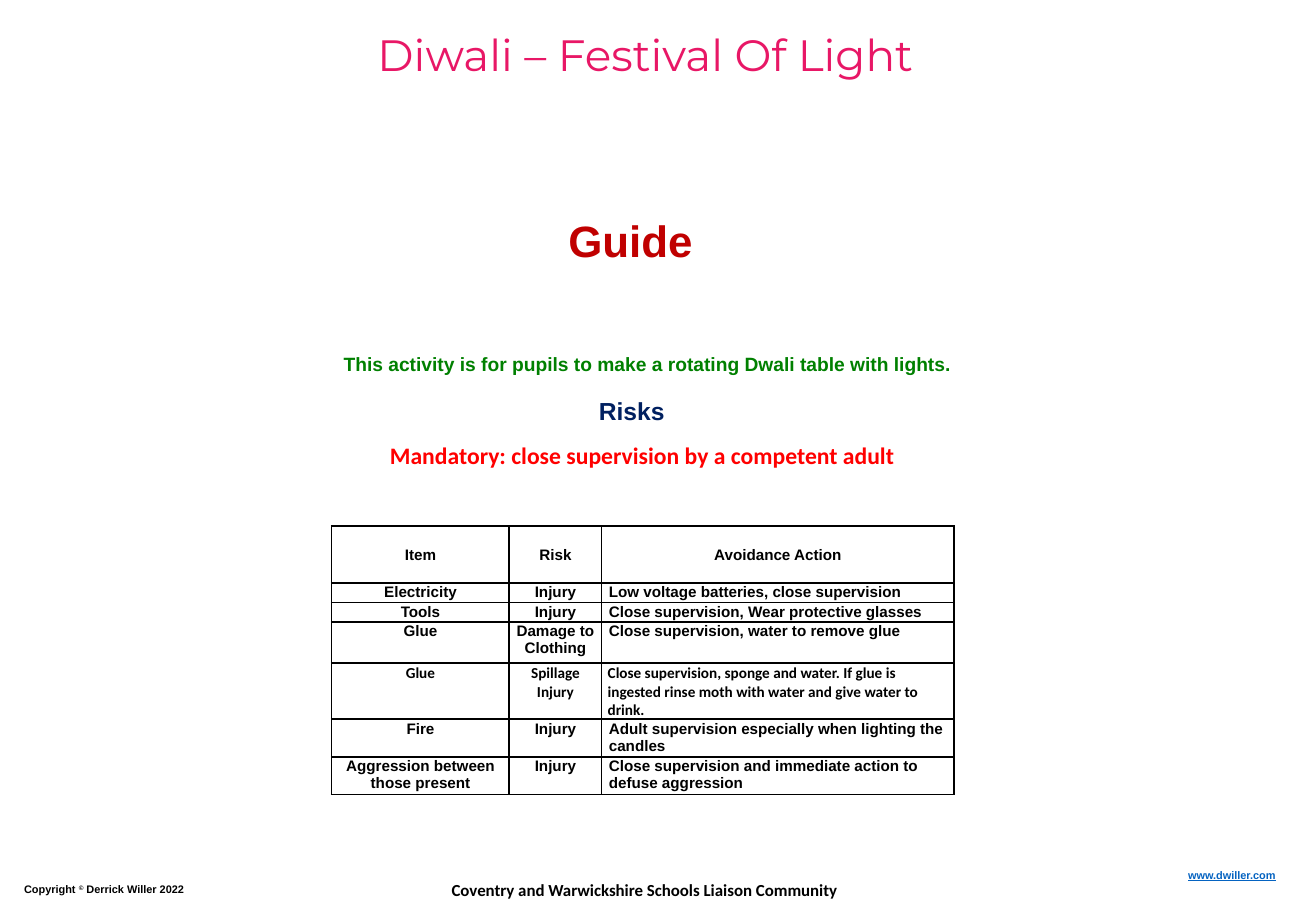
from dataclasses import dataclass
from lxml.etree import SubElement
from pptx import Presentation
from pptx.dml.color import RGBColor as Rgb
from pptx.enum.text import MSO_ANCHOR as Anchor, MSO_AUTO_SIZE as Fit, PP_ALIGN as Align
from pptx.oxml.ns import qn
from pptx.util import Pt


@dataclass(frozen=True)
class Theme:
    """Fonts, colours and type sizes of the guide."""
    display: str = "Montserrat"
    sans: str = "Arial"
    humanist: str = "Calibri"
    black: str = "000000"
    pink: str = "E81766"
    crimson: str = "C00000"
    green: str = "008000"
    navy: str = "002060"
    red: str = "FF0000"
    link: str = "0563C1"
    heading: float = 26
    risks: float = 14.6
    warning: float = 14
    body: float = 11.4
    community: float = 10
    table: float = 9
    small: float = 6.5


THEME = Theme()
PAGE_SIZE = (780, 540)
COLUMN_WIDTHS = (105.2, 54.8, 208.8)
ROW_HEIGHTS = (33.8, 11.4, 11.4, 24.4, 33.2, 22.2, 22.2)
CALIBRI_ROW = 4
RISK_ROWS = (
    ("Item", "Risk", "Avoidance Action"),
    ("Electricity", "Injury", "Low voltage batteries, close supervision"),
    ("Tools", "Injury", "Close supervision, Wear protective glasses"),
    ("Glue", "Damage to Clothing", "Close supervision, water to remove glue"),
    ("Glue", "Spillage\nInjury", "Close supervision, sponge and water. If glue is ingested "
     "rinse moth with water and give water to drink."),
    ("Fire", "Injury", "Adult supervision especially when lighting the candles"),
    ("Aggression between those present", "Injury",
     "Close supervision and immediate action to defuse aggression"),
)


def add_span(para, text, font=THEME.sans, size=THEME.table, color=THEME.black,
             bold=True, underline=None, raised=False):
    """Append formatted text to a paragraph."""
    span = para.add_run()
    span.text = text
    span.font.name = font
    span.font.size = Pt(size)
    span.font.bold = bold
    span.font.underline = underline
    span.font.color.rgb = Rgb.from_string(color)
    if raised:
        span._r.get_or_add_rPr().set("baseline", "30000")


def add_box(page, left, top, width, height, wrap=True, align=Align.LEFT):
    """Add a text box and return its first paragraph."""
    frame = page.shapes.add_textbox(Pt(left), Pt(top), Pt(width), Pt(height)).text_frame
    frame.word_wrap = wrap
    frame.auto_size = Fit.SHAPE_TO_FIT_TEXT
    frame.paragraphs[0].alignment = align
    return frame.paragraphs[0]


def add_title(page, left, top, width, height):
    """Place the title in the given box."""
    title = page.shapes.title
    title.left, title.top, title.width, title.height = map(Pt, (left, top, width, height))
    frame = title.text_frame
    frame.word_wrap = True
    frame.auto_size = Fit.NONE
    frame.vertical_anchor = Anchor.MIDDLE
    para = frame.paragraphs[0]
    para.alignment = Align.CENTER
    add_span(para, "Diwali – Festival Of Light", font=THEME.display, size=THEME.heading,
             color=THEME.pink, bold=False)


def add_introduction(page, left, top):
    """Place the heading, the aim and the risk notice from a top left corner."""
    add_span(add_box(page, left + 133.2, top, 89.3, 38.9, wrap=False), "Guide",
             size=THEME.heading, color=THEME.crimson)
    add_span(add_box(page, left, top + 82.1, 521.3, 20.9),
             "This activity is for pupils to make a rotating Dwali table with lights.",
             size=THEME.body, color=THEME.green)
    add_span(add_box(page, left + 151.2, top + 108, 54, 25.2, wrap=False), "Risks",
             size=THEME.risks, color=THEME.navy)
    add_span(add_box(page, left + 27.4, top + 134.6, 315.4, 24.5, wrap=False),
             "Mandatory: close supervision by a competent adult",
             font=THEME.humanist, size=THEME.warning, color=THEME.red)


def add_borders(cell):
    """Draw a thin black line on each side of a cell."""
    properties = cell._tc.get_or_add_tcPr()
    for index, side in enumerate(("a:lnL", "a:lnR", "a:lnT", "a:lnB")):
        line = SubElement(properties, qn(side), w=str(Pt(1)))
        fill = SubElement(line, qn("a:solidFill"))
        SubElement(fill, qn("a:srgbClr"), val=THEME.black)
        properties.insert(index, line)


def fill_cell(cell, text, font, inset, align, anchor):
    """Write and format one cell of the risk table."""
    cell.fill.background()
    add_borders(cell)
    cell.margin_left = cell.margin_right = Pt(inset)
    cell.margin_top, cell.margin_bottom = Pt(0.7), Pt(0)
    cell.vertical_anchor = anchor
    frame = cell.text_frame
    for index, line in enumerate(text.split("\n")):
        para = frame.add_paragraph() if index else frame.paragraphs[0]
        para.alignment = align
        add_span(para, line, font=font)


def add_risk_table(page, left, top):
    """Place the table of risks and avoidance actions."""
    table = page.shapes.add_table(len(RISK_ROWS), len(COLUMN_WIDTHS), Pt(left), Pt(top),
                                  Pt(sum(COLUMN_WIDTHS)), Pt(sum(ROW_HEIGHTS))).table
    table.first_row = table.horz_banding = False
    for column, width in zip(table.columns, COLUMN_WIDTHS):
        column.width = Pt(width)
    for row, height in zip(table.rows, ROW_HEIGHTS):
        row.height = Pt(height)
    for r, texts in enumerate(RISK_ROWS):
        font, inset = (THEME.humanist, 3.6) if r == CALIBRI_ROW else (THEME.sans, 4.3)
        for c, text in enumerate(texts):
            align = Align.LEFT if r and c == 2 else Align.CENTER
            anchor = Anchor.TOP if r else Anchor.MIDDLE
            fill_cell(table.cell(r, c), text, font, inset, align, anchor)


def add_footer(page, left, top):
    """Place the copyright, community and web address lines."""
    para = add_box(page, left, top + 8.6, 330.5, 15.1)
    add_span(para, "Copyright ", size=THEME.small)
    add_span(para, "©", size=THEME.small, raised=True)
    add_span(para, " Derrick Willer 2022", size=THEME.small)
    add_span(add_box(page, left + 253.4, top + 6.5, 284.4, 19.4, wrap=False),
             "Coventry and Warwickshire Schools Liaison Community",
             font=THEME.humanist, size=THEME.community)
    add_span(add_box(page, left + 677.5, top, 78.5, 15.1, align=Align.RIGHT),
             "www.dwiller.com", size=THEME.small, color=THEME.link, underline=True)


def main():
    """Build the guide and save it."""
    deck = Presentation()
    deck.slide_width, deck.slide_height = map(Pt, PAGE_SIZE)
    page = deck.slides.add_slide(deck.slide_layouts[5])
    add_title(page, 175.7, 12.2, 414, 39.6)
    add_introduction(page, 196.6, 123.1)
    add_risk_table(page, 196.6, 311.8)
    add_footer(page, 7.2, 511.2)
    deck.save("out.pptx")


if __name__ == "__main__":
    main()
